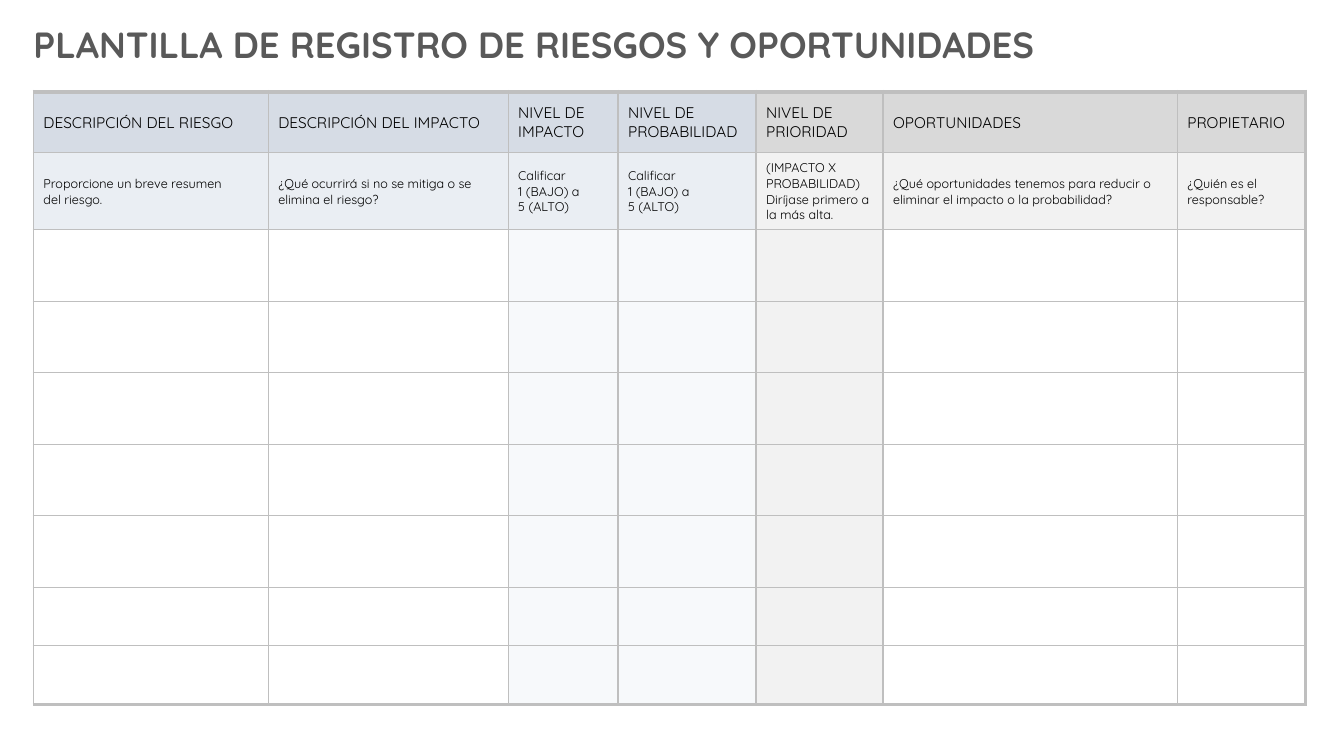
from copy import deepcopy
from dataclasses import dataclass

from lxml import etree
from pptx import Presentation
from pptx.dml.color import RGBColor
from pptx.enum.text import MSO_ANCHOR, MSO_AUTO_SIZE, PP_ALIGN
from pptx.oxml.ns import qn
from pptx.util import Pt

LEFT = PP_ALIGN.LEFT
TOP = MSO_ANCHOR.TOP
MIDDLE = MSO_ANCHOR.MIDDLE
GROW = MSO_AUTO_SIZE.SHAPE_TO_FIT_TEXT
FONT = "Quicksand"
HEX = {
    "title": "595959", "text": "000000", "line": "BFBFBF", "white": "FFFFFF",
    "blue": "D6DCE5", "pale": "EAEEF3", "faint": "F7F9FB",
    "gray": "D9D9D9", "light": "F2F2F2",
}
HEADS = (43.2, 55.4)
BODY = (51.1,) * 5 + (41.8,) * 2
SIZES = (11, 9)
THIN, WIDE, THICK = 1, 2.25, 3


@dataclass(frozen=True)
class Column:
    width: float
    head: str
    hint: str
    fills: tuple[str, str, str]


RISK = ("blue", "pale", "white")
SCORE = ("blue", "pale", "faint")
RANK = ("gray", "light", "light")
PLAN = ("gray", "light", "white")
SCALE = "Calificar\v1 (BAJO) a\v5 (ALTO)"
COLUMNS = (
    Column(167.8, "DESCRIPCIÓN DEL RIESGO", "Proporcione un breve resumen\vdel riesgo.", RISK),
    Column(171.4, "DESCRIPCIÓN DEL IMPACTO",
           "¿Qué ocurrirá si no se mitiga o se elimina el riesgo?", RISK),
    Column(78.5, "NIVEL DE\vIMPACTO", SCALE, SCORE),
    Column(98.6, "NIVEL DE PROBABILIDAD", SCALE, SCORE),
    Column(90.7, "NIVEL DE PRIORIDAD",
           "(IMPACTO X\vPROBABILIDAD)\vDiríjase primero a la más alta.", RANK),
    Column(210.2, "OPORTUNIDADES",
           "¿Qué oportunidades tenemos para reducir o eliminar el impacto o la probabilidad?", PLAN),
    Column(91.4, "PROPIETARIO", "¿Quién es el responsable?", PLAN),
)


def apply(target, values: dict) -> None:
    """Set each named value on the target."""
    for name, value in values.items():
        setattr(target, name, value)


def write(frame, text: str, size: float, color: str, bold: bool = False) -> None:
    """Write formatted text, with line breaks of the same size."""
    frame.text = text
    line = frame.paragraphs[0]
    line.alignment = LEFT
    for run in line.runs:
        apply(run.font, {"name": FONT, "size": Pt(size), "bold": bold})
        run.font.color.rgb = RGBColor.from_string(HEX[color])
    style = line.runs[0]._r.find(qn("a:rPr"))
    for gap in line._p.findall(qn("a:br")):
        gap.insert(0, deepcopy(style))


def border(cell, widths: dict[str, float]) -> None:
    """Draw the four cell borders."""
    props = cell._tc.get_or_add_tcPr()
    for side, width in widths.items():
        line = etree.SubElement(props, qn(f"a:ln{side}"), w=str(Pt(width)))
        fill = etree.SubElement(line, qn("a:solidFill"))
        etree.SubElement(fill, qn("a:srgbClr"), val=HEX["line"])


def add_title(slide) -> None:
    """Place the slide title."""
    title = slide.shapes.title
    apply(title, {"left": Pt(16.6), "top": Pt(12.2), "width": Pt(749.5), "height": Pt(38.9)})
    frame = title.text_frame
    apply(frame, {"word_wrap": True, "auto_size": GROW, "vertical_anchor": TOP})
    write(frame, "PLANTILLA DE REGISTRO DE RIESGOS Y OPORTUNIDADES", 26, "title", True)


def add_grid(slide) -> None:
    """Build the risk register table."""
    rows = HEADS + BODY
    width = sum(column.width for column in COLUMNS)
    grid = slide.shapes.add_table(
        len(rows), len(COLUMNS), Pt(23.8), Pt(65.5), Pt(width), Pt(sum(rows))
    ).table
    apply(grid, {"first_row": False, "horz_banding": False})
    for row, height in zip(grid.rows, rows):
        row.height = Pt(height)
    for x, column in enumerate(COLUMNS):
        grid.columns[x].width = Pt(column.width)
        for y in range(len(rows)):
            cell = grid.cell(y, x)
            border(cell, {
                "L": THIN,
                "R": WIDE if x == len(COLUMNS) - 1 else THIN,
                "T": THICK if y == 0 else THIN,
                "B": WIDE if y == len(rows) - 1 else THIN,
            })
            cell.fill.solid()
            shade = column.fills[min(y, len(HEADS))]
            cell.fill.fore_color.rgb = RGBColor.from_string(HEX[shade])
            if y < len(HEADS):
                apply(cell, {
                    "margin_left": Pt(7.2), "margin_top": Pt(0.7),
                    "margin_right": Pt(0.7), "margin_bottom": Pt(0),
                    "vertical_anchor": MIDDLE,
                })
                write(cell.text_frame, (column.head, column.hint)[y], SIZES[y], "text")


def main() -> None:
    """Create and save the slide."""
    deck = Presentation()
    apply(deck, {"slide_width": Pt(960), "slide_height": Pt(540)})
    slide = deck.slides.add_slide(deck.slide_layouts[5])
    add_title(slide)
    add_grid(slide)
    deck.save("out.pptx")


if __name__ == "__main__":
    main()
